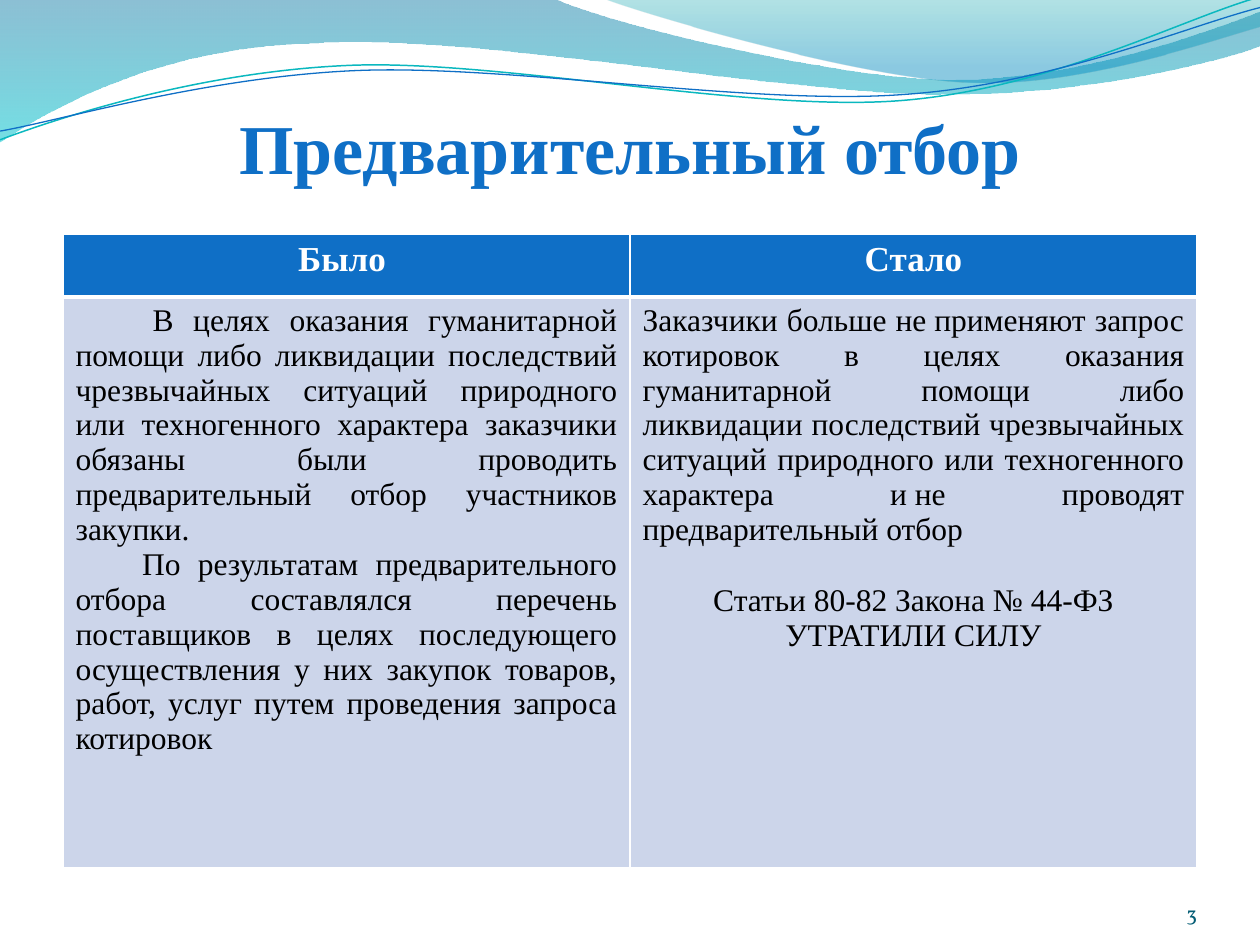
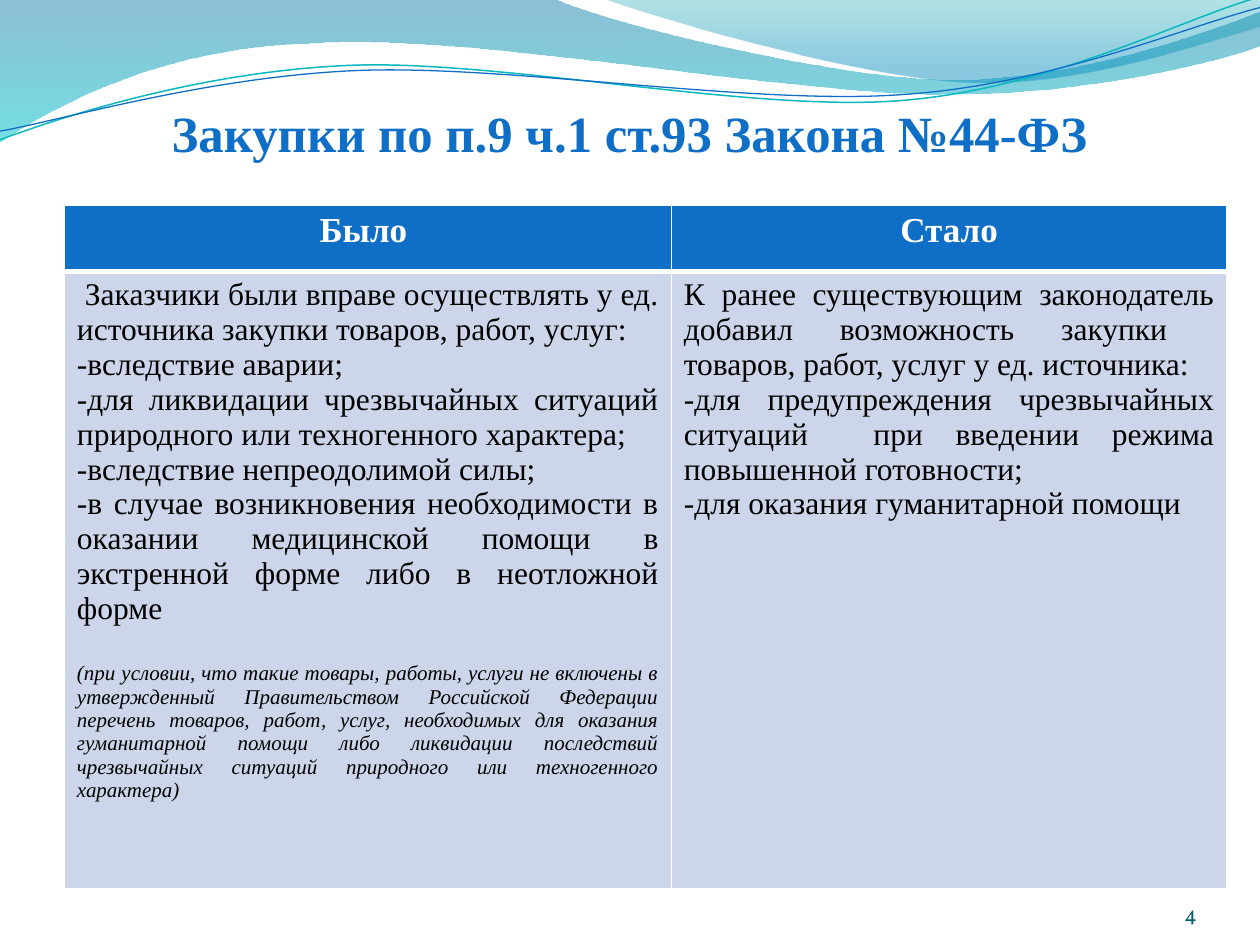
from lxml import etree
from pptx import Presentation
from pptx.dml.color import RGBColor
from pptx.enum import text
from pptx.oxml.ns import qn
from pptx.util import Pt

BLUE, TEAL, PALE, WHITE, BLACK = "0F6FC6", "0AB8BF", "CCD5EA", "FFFFFF", "000000"
PAGE_COLOR = "045D75"
SERIF, PAGE_FONT = "Times New Roman", "Vollkorn"
CENTER, RIGHT, JUSTIFY = text.PP_ALIGN.CENTER, text.PP_ALIGN.RIGHT, text.PP_ALIGN.JUSTIFY
SKIPPED_LINE = 20.5
NBSP = chr(160)

# Outlines in points: a pair is a straight segment, six numbers are a Bezier curve.
# Gradient stops: position, colour, opacity in percent.
WAVES = [
    dict(start=(0, 0), closed=True,
         stops=[(0, "0074A1", 45), (1, "00C6CF", 55)],
         segments=[(316.8, -0.7), (342.7, 12.2, 478.1, 45.4, 545.8, 45.4),
                   (614.2, 45.4, 689.8, 18.7, 720, 6.5), (720.7, 25.9),
                   (707.8, 31.7, 626.4, 54.7, 537.1, 54),
                   (447.8, 54, 275, 20.2, 185, 24.5),
                   (92.9, 25.9, 33.1, 59.8, -0.7, 81.4)]),
    dict(start=(344.9, -0.7), closed=True,
         stops=[(0, "00A1A9", 30), (0.8, "008BBF", 45)],
         segments=[(366.5, 7.9, 491, 44.6, 553.7, 46.8),
                   (616.3, 49.7, 691.9, 23, 720, 15.1), (720, 0)]),
    dict(start=(0, 79.9), line=(TEAL, 0.85),
         segments=[(34.6, 67, 113.8, 41, 199.4, 37.4),
                   (284.4, 33.8, 427, 64.1, 513.4, 57.6),
                   (599.8, 51.1, 675.4, 10.8, 718.6, -1.4)]),
    dict(start=(0, 74.9), line=(BLUE, 0.75),
         segments=[(33.8, 69.1, 118.1, 43.9, 203.8, 40.3),
                   (290.2, 36.7, 429.8, 60.5, 516.2, 54),
                   (601.9, 48.2, 677.5, 15.1, 720, 4.3)]),
]


def color(hex_value):
    return RGBColor.from_string(hex_value)


def bend(shape, segments):
    """Turn the straight segments that have control points into Bezier curves."""
    straight = list(shape._element.iter(qn("a:lnTo")))
    for line_to, (*controls, _, _) in zip(straight, segments):
        if controls:
            line_to.tag = qn("a:cubicBezTo")
            for place, (x, y) in enumerate(zip(controls[::2], controls[1::2])):
                point = etree.Element(qn("a:pt"), x=str(Pt(x) - shape.left),
                                      y=str(Pt(y) - shape.top))
                line_to.insert(place, point)


def write(frame, words, size=18, font=SERIF, ink=BLACK, bold=False, italic=False,
          align=JUSTIFY, indent=0, before=0):
    """Add a paragraph to the frame, using its first one while that is empty."""
    paragraph = frame.paragraphs[0]
    if paragraph.runs:
        paragraph = frame.add_paragraph()
    paragraph.alignment = align
    paragraph.space_before = Pt(before)
    if indent:
        paragraph._p.get_or_add_pPr().set("indent", str(Pt(indent)))
    run = paragraph.add_run()
    run.text = words
    run.font.size, run.font.name = Pt(size), font
    run.font.bold, run.font.italic = bold, italic
    run.font.color.rgb = color(ink)


def border(cell, **widths):
    """Draw white edges on a cell; keywords are L, R, T and B in that order."""
    properties = cell._tc.get_or_add_tcPr()
    for position, (side, width) in enumerate(widths.items()):
        edge = etree.Element(qn(f"a:ln{side}"), w=str(Pt(width)))
        fill = etree.SubElement(edge, qn("a:solidFill"))
        etree.SubElement(fill, qn("a:srgbClr"), val=WHITE)
        properties.insert(position, edge)


class Deck:
    def __init__(self):
        self.file = Presentation()
        self.file.slide_width, self.file.slide_height = Pt(720), Pt(540)
        self.slide = None

    def new_slide(self, title, title_size, title_height, page):
        self.slide = self.file.slides.add_slide(self.file.slide_layouts[6])
        for wave in WAVES:
            self.wave(**wave)
        heading = self.text_box(36, 55.4, 648, title_height,
                                text.MSO_ANCHOR.MIDDLE, top=3.6, bottom=13.5)
        write(heading, title, size=title_size, ink=BLUE, bold=True, align=CENTER)
        footer = self.text_box(624, 500.4, 60, 28.8, text.MSO_ANCHOR.BOTTOM)
        write(footer, page, size=12, font=PAGE_FONT, ink=PAGE_COLOR, align=RIGHT)

    def wave(self, start, segments, closed=False, stops=(), line=None):
        builder = self.slide.shapes.build_freeform(Pt(start[0]), Pt(start[1]))
        ends = [(Pt(x), Pt(y)) for *_, x, y in segments]
        builder.add_line_segments(ends, close=closed)
        shape = builder.convert_to_shape()
        bend(shape, segments)
        shape.shadow.inherit = False
        if line:
            shape.fill.background()
            shape.line.color.rgb, shape.line.width = color(line[0]), Pt(line[1])
            return
        shape.line.fill.background()
        shape.fill.gradient()
        shape.fill.gradient_angle = 270
        for stop, (position, tint, _) in zip(shape.fill.gradient_stops, stops):
            stop.position, stop.color.rgb = position, color(tint)
        tints = shape._element.spPr.iter(qn("a:srgbClr"))
        for tint, (_, _, opacity) in zip(list(tints), stops):
            etree.SubElement(tint, qn("a:alpha"), val=str(opacity * 1000))

    def text_box(self, left, y, width, height, anchor, top=0, bottom=0):
        box = self.slide.shapes.add_textbox(Pt(left), Pt(y), Pt(width), Pt(height))
        frame = box.text_frame
        frame.word_wrap, frame.vertical_anchor = True, anchor
        frame.margin_left = frame.margin_right = 0
        frame.margin_top, frame.margin_bottom = Pt(top), Pt(bottom)
        return frame

    def comparison(self, left, top, widths, heights, before, after):
        """Add the table; each body paragraph is its words and a dict of format."""
        table = self.slide.shapes.add_table(
            2, 2, Pt(left), Pt(top), Pt(sum(widths)), Pt(sum(heights))).table
        for row, height in zip(table.rows, heights):
            row.height = Pt(height)
        for index, (label, body) in enumerate([("Было ", before), ("Стало", after)]):
            table.columns[index].width = Pt(widths[index])
            header, content = table.cell(0, index), table.cell(1, index)
            for cell, fill in ((header, BLUE), (content, PALE)):
                cell.fill.solid()
                cell.fill.fore_color.rgb = color(fill)
            border(header, L=1, R=1, T=1, B=3)
            border(content, L=1, R=1, B=1)
            write(header.text_frame, label, size=20, ink=WHITE, bold=True, align=CENTER)
            for words, style in body:
                write(content.text_frame, words, **style)


def main():
    deck = Deck()

    deck.new_slide("Предварительный отбор", 40, 67, "3")
    deck.comparison(
        36, 133.9, (324, 324), (35.8, 326.2),
        before=[
            ("В целях оказания гуманитарной помощи либо ликвидации последствий "
             "чрезвычайных ситуаций природного или техногенного характера заказчики "
             "обязаны были проводить предварительный отбор участников закупки.",
             dict(indent=44)),
            ("По результатам предварительного отбора составлялся перечень поставщиков "
             "в целях последующего осуществления у них закупок товаров, работ, услуг "
             "путем проведения запроса котировок", dict(indent=38)),
        ],
        after=[
            (f"Заказчики больше не{NBSP}применяют запрос котировок в целях оказания "
             "гуманитарной помощи либо ликвидации последствий чрезвычайных ситуаций "
             f"природного или техногенного характера и{NBSP}не проводят "
             "предварительный отбор", {}),
            (f"Статьи 80-82 Закона №{NBSP}44-ФЗ",
             dict(align=CENTER, before=SKIPPED_LINE)),
            ("УТРАТИЛИ СИЛУ", dict(align=CENTER)),
        ])

    deck.new_slide("Закупки по п.9 ч.1 ст.93 Закона №44-ФЗ", 29, 50.4, "4")
    deck.comparison(
        36.8, 117, (346.8, 317.5), (38, 353),
        before=[
            (" Заказчики были вправе осуществлять у ед. источника закупки товаров, "
             "работ, услуг:", {}),
            ("-вследствие аварии;", {}),
            ("-для ликвидации чрезвычайных ситуаций природного или техногенного "
             "характера;", {}),
            ("-вследствие непреодолимой силы;", {}),
            ("-в случае возникновения необходимости в оказании медицинской помощи "
             "в экстренной форме либо в неотложной форме", {}),
            ("(при условии, что такие товары, работы, услуги не включены в утвержденный "
             "Правительством Российской Федерации перечень товаров, работ, услуг, "
             "необходимых для оказания гуманитарной помощи либо ликвидации последствий "
             "чрезвычайных ситуаций природного или техногенного характера)",
             dict(size=12, italic=True, before=SKIPPED_LINE)),
        ],
        after=[
            ("К ранее существующим законодатель добавил возможность закупки  товаров, "
             "работ, услуг у ед. источника:", {}),
            ("-для предупреждения чрезвычайных ситуаций  при введении режима "
             "повышенной готовности;", {}),
            ("-для оказания гуманитарной помощи", {}),
        ])

    deck.file.save("out.pptx")


if __name__ == "__main__":
    main()
